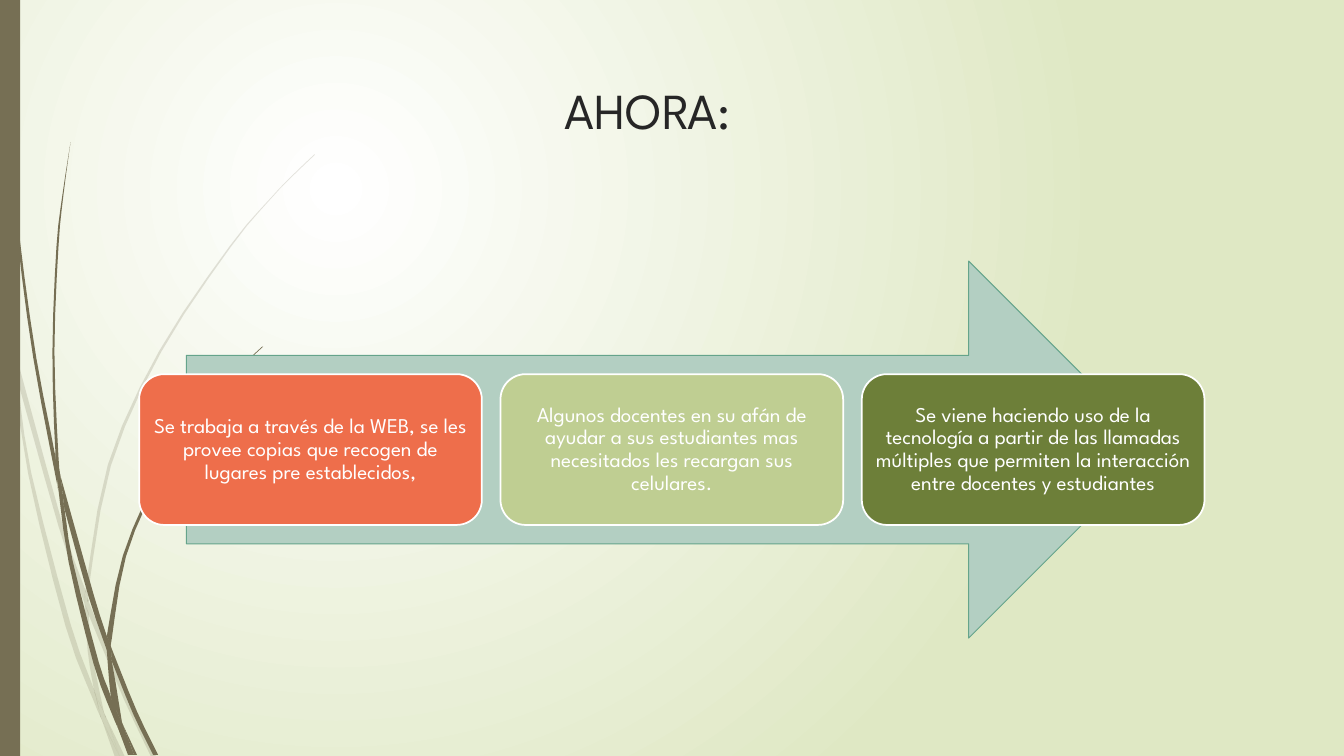
from lxml import etree
from pptx import Presentation
from pptx.dml.color import RGBColor
from pptx.enum.shapes import MSO_SHAPE
from pptx.enum.text import MSO_ANCHOR, PP_ALIGN
from pptx.oxml.ns import qn
from pptx.util import Pt

RECT, ARROW, CARD = MSO_SHAPE.RECTANGLE, MSO_SHAPE.RIGHT_ARROW, MSO_SHAPE.ROUNDED_RECTANGLE
TOP, MIDDLE, CENTER = MSO_ANCHOR.TOP, MSO_ANCHOR.MIDDLE, PP_ALIGN.CENTER
FONT = "League Spartan"
WHITE = RGBColor(0xFF, 0xFF, 0xFF)
PALE_GREEN = RGBColor(0xDF, 0xE8, 0xC4)
BROWN = RGBColor(0x76, 0x6F, 0x54)
DARK = RGBColor(0x26, 0x26, 0x26)
TEAL_FILL = RGBColor(0xB3, 0xCF, 0xC2)
TEAL_LINE = RGBColor(0x65, 0xA4, 0x8B)
ORANGE = RGBColor(0xEE, 0x6E, 0x4B)
LIME = RGBColor(0xBF, 0xCE, 0x92)
OLIVE = RGBColor(0x6D, 0x7F, 0x39)

SLIDE_W, SLIDE_H = 960, 540
GRASS_UNIT = 0.72  # points per step of the grass grid

# Each piece of grass: left edge and right edge, on the grass grid
PALE_GRASS = [
    ([(0, 299), (10, 344), (11, 350)], [(0, 282), (9, 322), (11, 350)]),
    ([(17, 376), (58, 522), (84, 599)], [(14, 345), (62, 520), (85, 586)]),
    ([(88, 610), (123, 694), (150, 751)], [(88, 596), (92, 607), (127, 692), (155, 751)]),
    ([(105, 711), (119, 751)], [(105, 711), (124, 751)]),
    ([(11, 350), (28, 470), (65, 621), (92, 693), (101, 714)],
     [(11, 350), (17, 376), (31, 469), (70, 619), (93, 683), (99, 707), (101, 714)]),
    ([(84, 599), (87, 646), (93, 683), (96, 692), (105, 711)],
     [(88, 608), (91, 646), (103, 706), (105, 711)]),
    ([(312, 153), (289, 175), (268, 197), (228, 244), (158, 348), (107, 461), (85, 584), (85, 586)],
     [(312, 154), (290, 175), (268, 198), (229, 245), (160, 349), (110, 462), (88, 584), (88, 596)]),
    ([(101, 714), (114, 751)], [(101, 714), (119, 751)]),
    ([(85, 586), (84, 599)], [(88, 596), (88, 610)]),
    ([(93, 683), (99, 707), (101, 714), (119, 751)],
     [(93, 683), (96, 692), (105, 711), (119, 751)]),
]
DARK_GRASS = [
    ([(3, 0), (4, 48), (7, 110), (17, 233), (33, 355), (56, 477), (57, 481)],
     [(4, 0), (5, 48), (8, 109), (19, 232), (36, 355), (55, 453), (57, 481)]),
    ([(64, 505), (88, 592), (106, 645)], [(60, 472), (93, 590), (106, 631)]),
    ([(111, 656), (132, 708), (152, 749)], [(110, 641), (113, 649), (136, 706), (157, 749)]),
    ([(57, 477), (68, 557), (93, 659), (111, 708), (117, 722)],
     [(57, 477), (64, 505), (72, 556), (98, 657), (110, 691), (117, 722)]),
    ([(70, 141), (62, 193), (56, 245), (52, 349), (55, 449), (60, 472)],
     [(70, 141), (63, 193), (58, 245), (54, 349), (58, 453), (60, 472)]),
    ([(122, 719), (133, 749)], [(122, 719), (136, 749)]),
    ([(55, 449), (55, 453), (57, 477), (64, 505)], [(55, 449), (60, 472), (64, 505)]),
    ([(260, 344), (245, 358), (231, 373), (204, 405), (156, 474), (122, 551), (106, 631)],
     [(261, 344), (245, 359), (231, 374), (205, 406), (158, 476), (125, 552), (111, 633),
      (110, 641)]),
    ([(117, 722), (127, 749)], [(117, 722), (131, 749)]),
    ([(106, 645), (110, 691), (116, 706), (122, 719)],
     [(106, 645), (111, 656), (121, 716), (122, 719)]),
    ([(106, 631), (106, 645), (109, 651), (111, 656)], [(106, 631), (110, 641), (111, 656)]),
    ([(110, 691), (117, 722), (130, 749)], [(110, 691), (116, 706), (122, 719), (133, 749)]),
]
CARDS = [
    (ORANGE, "Se trabaja a través de la WEB, se les provee copias que recogen de "
             "lugares pre establecidos,"),
    (LIME, "Algunos docentes en su afán de ayudar a sus estudiantes mas necesitados "
           "les recargan sus celulares."),
    (OLIVE, "Se viene haciendo uso de la tecnología a partir de las llamadas múltiples "
            "que permiten la interacción entre docentes y estudiantes"),
]


def style(sp, fill, line=None, width=0):
    sp.shadow.inherit = False
    sp.fill.solid()
    sp.fill.fore_color.rgb = fill
    if line is None:
        sp.line.fill.background()
    else:
        sp.line.color.rgb = line
        sp.line.width = Pt(width)


def add_shape(s, kind, left, top, width, height, *look):
    sp = s.shapes.add_shape(kind, Pt(left), Pt(top), Pt(width), Pt(height))
    style(sp, *look)
    return sp


def set_text(tf, text, size, color, anchor):
    tf.text = text
    tf.word_wrap = True
    tf.vertical_anchor = anchor
    p = tf.paragraphs[0]
    p.alignment = CENTER
    p.font.name, p.font.size, p.font.color.rgb = FONT, Pt(size), color
    return p


def smooth(knots, steps=3):
    """Catmull-Rom curve through the knots."""
    ends = [knots[0], *knots, knots[-1]]
    curve = []
    for a, b, c, d in zip(ends, ends[1:], ends[2:], ends[3:]):
        for i in range(steps):
            t = i / steps
            curve.append(tuple(
                (2 * q + (r - p) * t + (2 * p - 5 * q + 4 * r - u) * t ** 2
                 + (3 * q - p - 3 * r + u) * t ** 3) / 2
                for p, q, r, u in zip(a, b, c, d)))
    return curve + [knots[-1]]


def add_background(s):
    fill = s.background.fill
    fill.gradient()
    for stop, color, position in zip(fill.gradient_stops, (WHITE, PALE_GREEN), (0, 1)):
        stop.color.rgb = color
        stop.position = position
    # Circular gradient centred a quarter of the way in
    grad = s.element.find(".//" + qn("a:gradFill"))
    grad.remove(grad.find(qn("a:lin")))
    circle = etree.SubElement(grad, qn("a:path"), {"path": "circle"})
    etree.SubElement(circle, qn("a:fillToRect"),
                     {"l": "50000", "t": "50000", "r": "100000", "b": "100000"})


def add_grass(s, left, top, pieces, alpha=100):
    group = s.shapes.add_group_shape()
    fine = 100  # drawing units per point
    for left_edge, right_edge in pieces:
        outline = [((left + x * GRASS_UNIT) * fine, (top + y * GRASS_UNIT) * fine)
                   for x, y in smooth(left_edge) + smooth(right_edge)[::-1]]
        builder = group.shapes.build_freeform(*outline[0], scale=Pt(1) / fine)
        builder.add_line_segments(outline[1:], close=True)
        sp = builder.convert_to_shape()
        style(sp, BROWN)
        if alpha < 100:
            color = sp.element.spPr.find(qn("a:solidFill"))[0]
            etree.SubElement(color, qn("a:alpha"), {"val": str(alpha * 1000)})


def add_title(s, left, top, width, height):
    title = s.shapes.title
    title.left, title.top, title.width, title.height = map(Pt, (left, top, width, height))
    set_text(title.text_frame, "AHORA:", 36, DARK, TOP)


def add_process(s, left, top, width, height):
    # Arrow behind the cards
    inset = 33.8
    add_shape(s, ARROW, left + inset, top, width - 2 * inset, height, TEAL_FILL, TEAL_LINE, 0.75)
    # Evenly spaced cards
    card_w, card_h = 244.8, 0.4 * height
    pitch = (width - card_w) / (len(CARDS) - 1)
    for i, (color, text) in enumerate(CARDS):
        sp = add_shape(s, CARD, left + i * pitch, top + (height - card_h) / 2,
                       card_w, card_h, color, WHITE, 1.25)
        tf = sp.text_frame
        tf.margin_left = tf.margin_right = tf.margin_top = tf.margin_bottom = Pt(4.3)
        p = set_text(tf, text, 15, WHITE, MIDDLE)
        p.line_spacing = 0.9


def main():
    prs = Presentation()
    prs.slide_width, prs.slide_height = Pt(SLIDE_W), Pt(SLIDE_H)
    s = prs.slides.add_slide(prs.slide_layouts[5])
    add_background(s)
    # Grass and side band
    add_grass(s, 0, 0, PALE_GRASS, alpha=20)
    add_grass(s, 0, 0, DARK_GRASS)
    add_shape(s, RECT, 0, 0, 14.4, SLIDE_H, BROWN)
    # Content
    add_title(s, 111.6, 52.6, 702, 100.8)
    add_process(s, 99.4, 186.5, 761, 269.3)
    prs.save("out.pptx")


if __name__ == "__main__":
    main()
